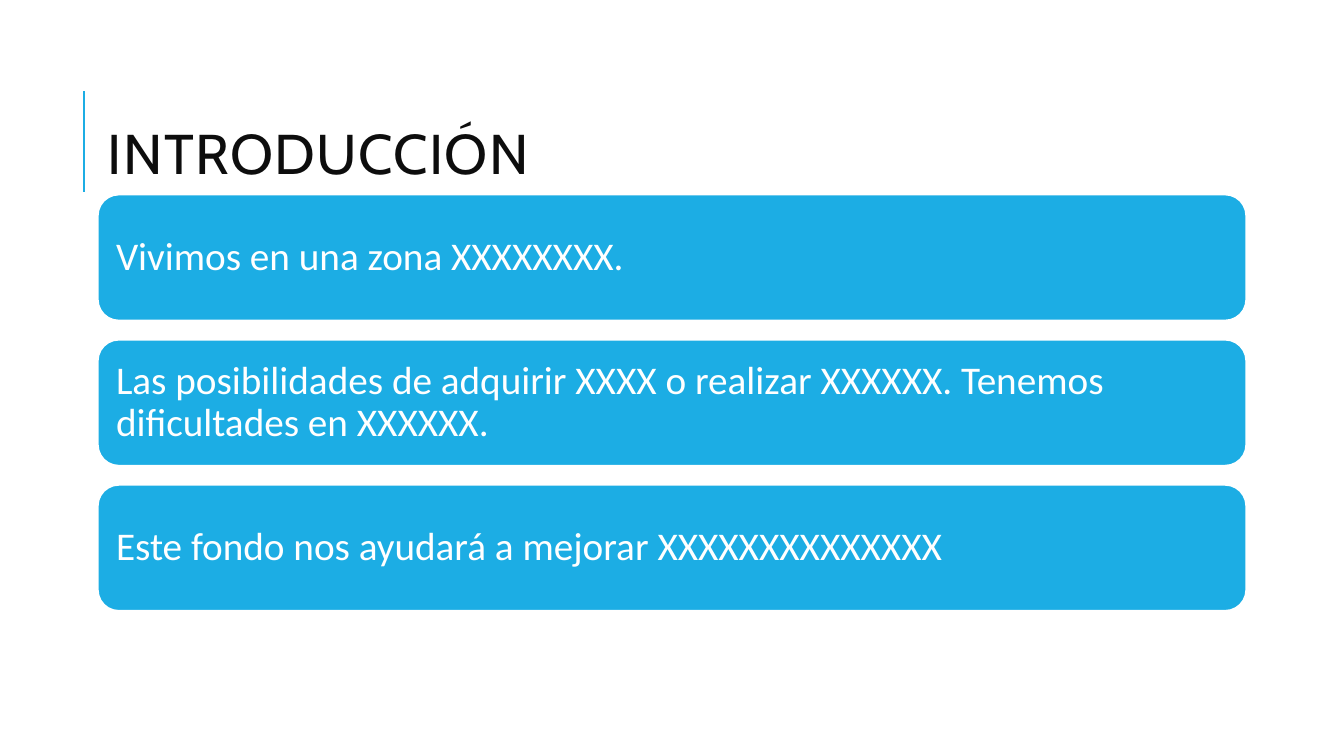
from pptx import Presentation
from pptx.dml.color import RGBColor
from pptx.enum import shapes, text
from pptx.oxml.ns import qn
from pptx.util import Inches, Pt

TITLE = "INTRODUCCIÓN"
POINTS = [
    "Vivimos en una zona XXXXXXXX.",
    "Las posibilidades de adquirir XXXX o realizar XXXXXX. "
    "Tenemos dificultades en XXXXXX.",
    "Este fondo nos ayudará a mejorar XXXXXXXXXXXXXX",
]
COLORS = {k: RGBColor.from_string(v) for k, v in {
    "accent": "1CADE4", "title": "0D0D0D", "white": "FFFFFF"}.items()}

LEFT = 0.97
CARD_TOP, CARD_W, CARD_H, CARD_GAP = 1.93, 11.39, 1.25, 0.19
CARD_INSET = Inches(0.12)


def add_accent_line(slide):
    line = slide.shapes.add_connector(
        shapes.MSO_CONNECTOR.STRAIGHT,
        Inches(0.83), Inches(1.9), Inches(0.83), Inches(0.9))
    line.line.color.rgb = COLORS["accent"]
    line.line.width = Pt(1.5)
    sp_pr = line._element.spPr
    sp_pr.append(sp_pr.makeelement(qn("a:effectLst"), {}))


def format_title(title):
    title.left, title.top = Inches(LEFT), Inches(0.83)
    title.width, title.height = Inches(4.96), Inches(1.06)
    tf = title.text_frame
    tf.text = TITLE
    tf.auto_size = text.MSO_AUTO_SIZE.NONE
    tf.vertical_anchor = text.MSO_ANCHOR.BOTTOM
    p = tf.paragraphs[0]
    p.alignment = text.PP_ALIGN.LEFT
    p.line_spacing = 0.8
    r = p.runs[0]
    r.font.name, r.font.size = "Cabin", Pt(40)
    r.font.color.rgb = COLORS["title"]
    r.font._element.set("spc", "100")


def add_card(slide, top, words):
    sp = slide.shapes.add_shape(
        shapes.MSO_SHAPE.ROUNDED_RECTANGLE,
        Inches(LEFT), Inches(top), Inches(CARD_W), Inches(CARD_H))
    sp.shadow.inherit = False
    sp.fill.solid()
    sp.fill.fore_color.rgb = COLORS["accent"]
    sp.line.color.rgb = COLORS["white"]
    sp.line.width = Pt(1.25)
    tf = sp.text_frame
    tf.word_wrap = True
    tf.vertical_anchor = text.MSO_ANCHOR.MIDDLE
    tf.margin_left = tf.margin_right = CARD_INSET
    tf.margin_top = tf.margin_bottom = CARD_INSET
    p = tf.paragraphs[0]
    p.text = words
    p.alignment = text.PP_ALIGN.LEFT
    p.line_spacing = 0.9
    p.font.name, p.font.size = "Calibri", Pt(28)
    p.font.color.rgb = COLORS["white"]


def main():
    prs = Presentation()
    prs.slide_width, prs.slide_height = Inches(13.33), Inches(7.5)
    slide = prs.slides.add_slide(prs.slide_layouts.get_by_name("Title Only"))
    add_accent_line(slide)
    format_title(slide.shapes.title)
    for i, words in enumerate(POINTS):
        add_card(slide, CARD_TOP + i * (CARD_H + CARD_GAP), words)
    prs.save("out.pptx")


if __name__ == "__main__":
    main()
